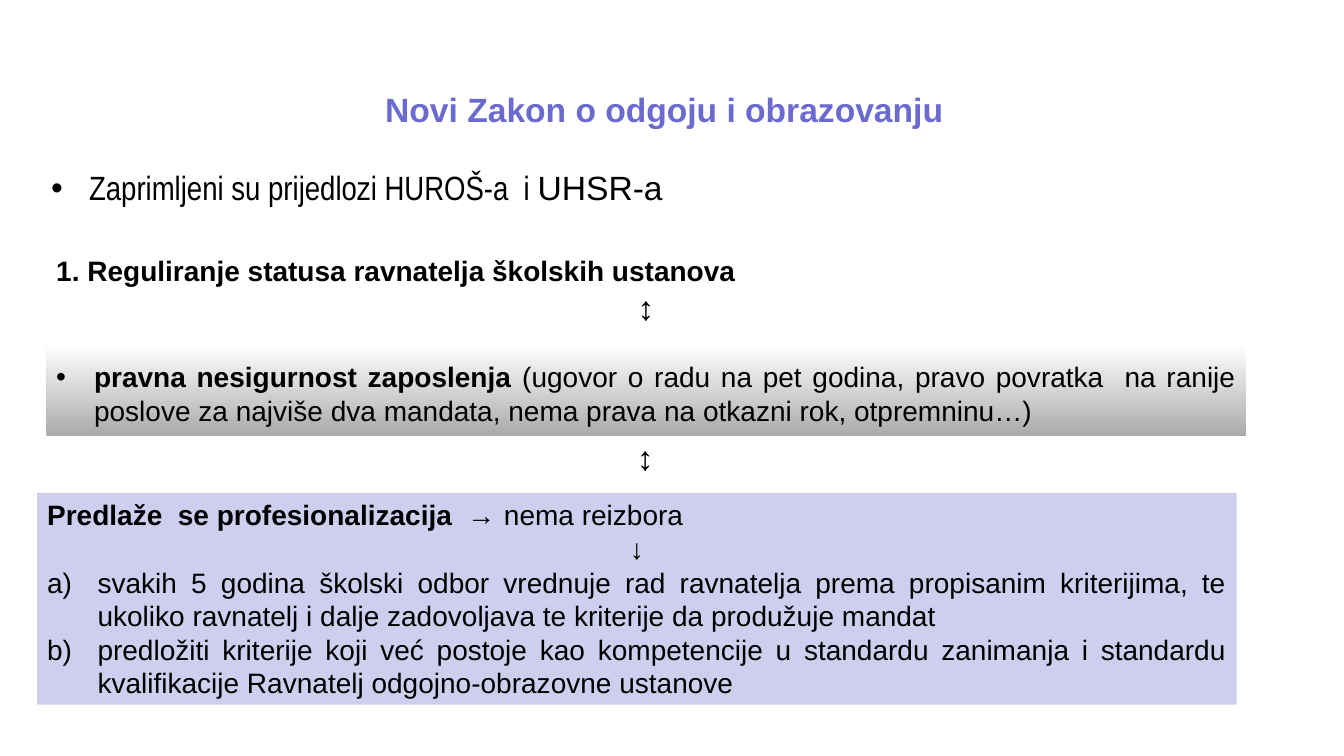
from pptx import Presentation
from pptx.dml.color import RGBColor
from pptx.enum.shapes import MSO_SHAPE
from pptx.enum.text import MSO_ANCHOR, MSO_AUTO_SIZE, PP_ALIGN
from pptx.oxml.ns import qn
from pptx.util import Pt
from lxml import etree

RECTANGLE = MSO_SHAPE.RECTANGLE
TOP, MIDDLE = MSO_ANCHOR.TOP, MSO_ANCHOR.MIDDLE
LEFT, CENTER, JUSTIFY = PP_ALIGN.LEFT, PP_ALIGN.CENTER, PP_ALIGN.JUSTIFY
NO_AUTOFIT = MSO_AUTO_SIZE.NONE

BLACK, WHITE, GREY = "000000", "FFFFFF", "ABABAB"
VIOLET, LAVENDER = "6B6BCF", "CECEEF"
ARIAL, NARROW = "Arial", "Arial Narrow"


def rgb(value):
    return RGBColor.from_string(value)


def add_run(paragraph, text, size=20, bold=False, font=ARIAL, color=BLACK):
    run = paragraph.add_run()
    run.text = text
    run.font.size = Pt(size)
    run.font.bold = bold
    run.font.name = font
    run.font.color.rgb = rgb(color)


def add_paragraph(shape, alignment, first=False, space_before=0):
    frame = shape.text_frame
    paragraph = frame.paragraphs[0] if first else frame.add_paragraph()
    paragraph.alignment = alignment
    paragraph.space_before = Pt(space_before)
    return paragraph


def set_indent(paragraph, indent):
    properties = paragraph._p.get_or_add_pPr()
    properties.set("marL", str(Pt(indent)))
    properties.set("indent", str(-Pt(indent)))
    return properties


def set_bullet(paragraph, indent=27):
    properties = set_indent(paragraph, indent)
    etree.SubElement(properties, qn("a:buFont")).set("typeface", ARIAL)
    etree.SubElement(properties, qn("a:buChar")).set("char", "•")


def set_lettering(paragraph, indent=36):
    properties = set_indent(paragraph, indent)
    etree.SubElement(properties, qn("a:buFont")).set("typeface", ARIAL)
    etree.SubElement(properties, qn("a:buAutoNum")).set("type", "alphaLcParenR")


def add_text_box(slide, left, top, width, height, wrap=True):
    box = slide.shapes.add_textbox(Pt(left), Pt(top), Pt(width), Pt(height))
    box.text_frame.word_wrap = wrap
    return box


def add_panel(slide, left, top, width, height):
    panel = slide.shapes.add_shape(RECTANGLE, Pt(left), Pt(top), Pt(width), Pt(height))
    panel.shadow.inherit = False
    panel.line.fill.background()
    panel.text_frame.word_wrap = True
    panel.text_frame.vertical_anchor = MIDDLE
    return panel


def fill_gradient(shape, stops, angle):
    shape.fill.gradient()
    shape.fill.gradient_angle = angle
    for stop, (position, color) in zip(shape.fill.gradient_stops, stops):
        stop.position = position
        stop.color.rgb = rgb(color)


def add_title(slide):
    title = slide.shapes.title
    title.left, title.top, title.width, title.height = Pt(150.5), Pt(59.8), Pt(648), Pt(51.8)
    title.text_frame.auto_size = NO_AUTOFIT
    title.text_frame.vertical_anchor = TOP
    paragraph = add_paragraph(title, CENTER, first=True)
    add_run(paragraph, "Novi Zakon o odgoju i obrazovanju", 24, True, color=VIOLET)


def add_proposals(slide):
    box = add_text_box(slide, 29.5, 116, 891.4, 48.2)
    paragraph = add_paragraph(box, LEFT, first=True)
    set_bullet(paragraph)
    add_run(paragraph, "Zaprimljeni su prijedlozi HUROŠ-a  i ", 24, font=NARROW)
    add_run(paragraph, "UHSR-a", 24)


def add_status_panel(slide):
    panel = add_panel(slide, 33.1, 175, 856.8, 136.1)
    fill_gradient(panel, [(0, GREY), (0.48, WHITE)], 90)
    heading = add_paragraph(panel, JUSTIFY, first=True)
    add_run(heading, "1. Reguliranje statusa ravnatelja školskih ustanova", bold=True)
    add_run(add_paragraph(panel, CENTER), "↕", 24, True, NARROW)
    problem = add_paragraph(panel, JUSTIFY, space_before=23)
    set_bullet(problem)
    add_run(problem, "pravna nesigurnost zaposlenja ", bold=True)
    add_run(problem, "(ugovor o radu na pet godina, pravo povratka  na ranije poslove "
                     "za najviše dva mandata, nema prava na otkazni rok, otpremninu…)")


def add_proposal_panel(slide):
    panel = add_panel(slide, 26.6, 352.1, 856.8, 151.2)
    panel.fill.solid()
    panel.fill.fore_color.rgb = rgb(LAVENDER)
    heading = add_paragraph(panel, JUSTIFY, first=True)
    add_run(heading, "Predlaže  se profesionalizacija  → ", bold=True)
    add_run(heading, "nema reizbora")
    add_run(add_paragraph(panel, CENTER), "↓")
    for text in (
        "svakih 5 godina školski odbor vrednuje rad ravnatelja prema propisanim kriterijima, "
        "te ukoliko ravnatelj i dalje zadovoljava te kriterije da produžuje mandat",
        "predložiti kriterije koji već postoje kao kompetencije u standardu zanimanja "
        "i standardu kvalifikacije Ravnatelj odgojno-obrazovne ustanove",
    ):
        paragraph = add_paragraph(panel, JUSTIFY)
        set_lettering(paragraph)
        add_run(paragraph, text)


def add_link_arrow(slide):
    box = add_text_box(slide, 447.8, 308.9, 26.6, 36, wrap=False)
    add_run(add_paragraph(box, LEFT, first=True), "↕", 24, True, NARROW)


def main():
    presentation = Presentation()
    presentation.slide_width, presentation.slide_height = Pt(960), Pt(540)
    slide = presentation.slides.add_slide(presentation.slide_layouts.get_by_name("Title Only"))
    add_title(slide)
    add_proposals(slide)
    add_status_panel(slide)
    add_proposal_panel(slide)
    add_link_arrow(slide)
    presentation.save("out.pptx")


if __name__ == "__main__":
    main()
